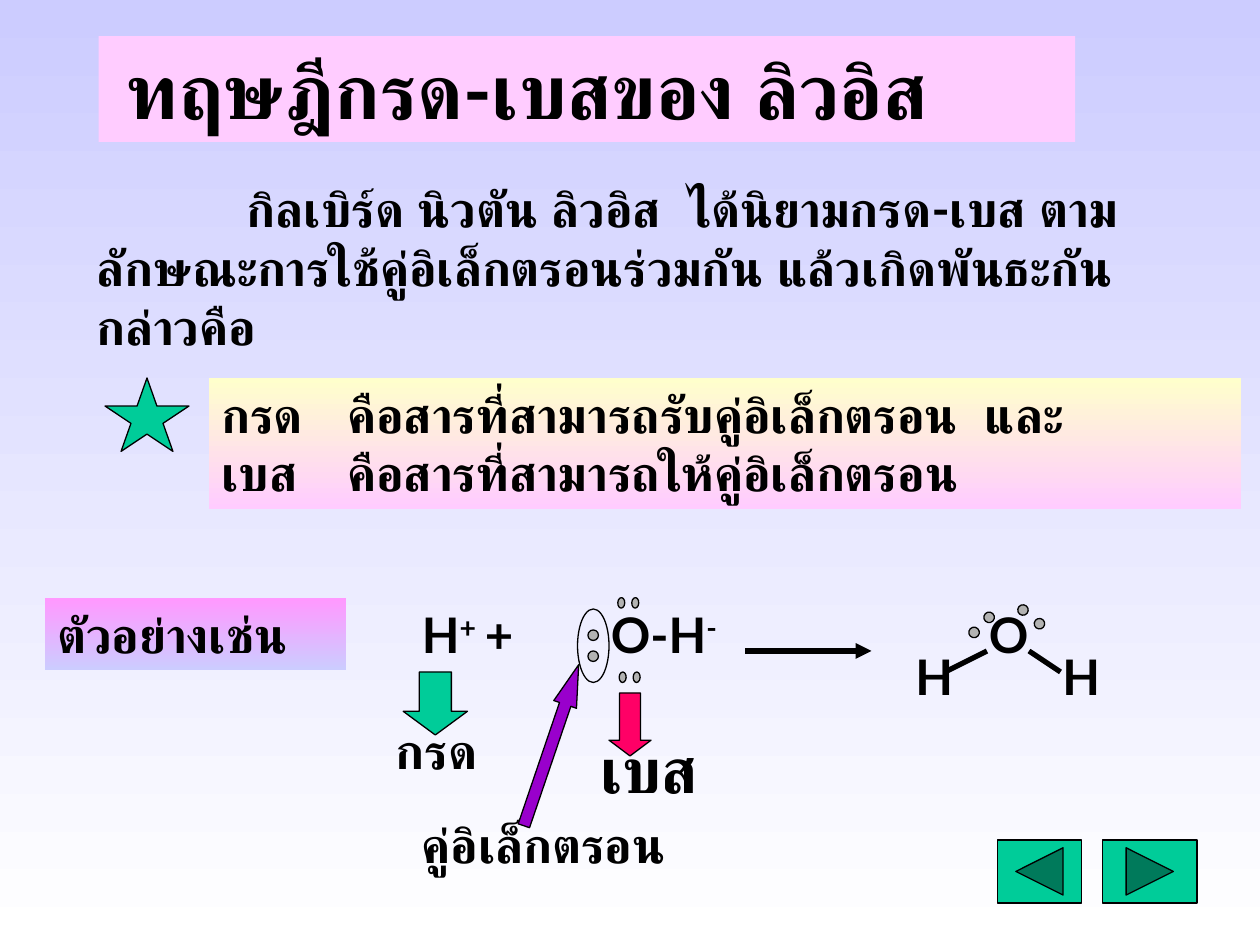
import pptx
import pptx.util
import pptx.dml.color
import pptx.enum.shapes
import pptx.enum.text
import pptx.oxml
import pptx.oxml.ns

Pt = pptx.util.Pt
SHAPE = pptx.enum.shapes.MSO_SHAPE

COLORS = {
    "ink": "000000", "lilac": "CCCCFF", "white": "FFFFFF", "pink": "FFCCFF",
    "cream": "FFFFCC", "magenta": "FF99FF", "green": "00CC99",
    "red": "FF0066", "purple": "9900CC", "dot": "B2B2B2",
}


def color(name):
    return pptx.dml.color.RGBColor.from_string(COLORS[name])


def paint(fill, names):
    """Fill with nothing, one colour, or a pair running from top to bottom."""
    if names is None:
        fill.background()
    elif isinstance(names, str):
        fill.solid()
        fill.fore_color.rgb = color(names)
    else:
        fill.gradient()
        fill.gradient_angle = 270
        for stop, name in zip(fill.gradient_stops, names):
            stop.color.rgb = color(name)


def add_shape(page, kind, place, fill=None, outlined=True, rotation=0, adjust=()):
    shape = page.shapes.add_shape(kind, *map(Pt, place))
    shape.shadow.inherit = False
    shape.rotation = rotation
    paint(shape.fill, fill)
    if outlined:
        shape.line.color.rgb = color("ink")
        shape.line.width = Pt(0.75)
    else:
        shape.line.fill.background()
    for index, value in enumerate(adjust):
        shape.adjustments[index] = value
    return shape


def write(box, *pieces, size=28, font="Lato", indent=0, tab=None):
    """Write spans into a box; a (text, True) piece is a superscript."""
    frame = box.text_frame
    for name, value in {
        "word_wrap": True,
        "auto_size": pptx.enum.text.MSO_AUTO_SIZE.SHAPE_TO_FIT_TEXT,
        "vertical_anchor": pptx.enum.text.MSO_ANCHOR.TOP,
    }.items():
        setattr(frame, name, value)
    para = frame.paragraphs[0]
    para.alignment = pptx.enum.text.PP_ALIGN.LEFT
    properties = para._p.get_or_add_pPr()
    properties.set("marL", "0")
    properties.set("indent", str(Pt(indent)))
    if tab:
        stops = pptx.oxml.parse_xml(
            f'<a:tabLst {pptx.oxml.ns.nsdecls("a")}>'
            f'<a:tab pos="{Pt(tab)}" algn="l"/></a:tabLst>')
        properties.append(stops)
    for number, (text, raised) in enumerate(pieces):
        for part_number, part in enumerate(text.split("\v")):
            if part_number:
                para.add_line_break()
            span = para.add_run()
            span.text = part
            for name, value in {"name": font, "size": Pt(size), "bold": True}.items():
                setattr(span.font, name, value)
            span.font.color.rgb = color("ink")
            if raised:
                span.font._element.set("baseline", "30000")


def add_label(page, place, *pieces, **style):
    write(page.shapes.add_textbox(*map(Pt, place)), *pieces, **style)


def add_panel(page, place, fill, text, **style):
    panel = add_shape(page, SHAPE.RECTANGLE, place, fill, outlined=False)
    write(panel, (text, False), **style)


def add_line(page, start, end, arrow=False):
    line = page.shapes.add_connector(
        pptx.enum.shapes.MSO_CONNECTOR.STRAIGHT, *map(Pt, start + end))
    line.line.color.rgb = color("ink")
    line.line.width = Pt(3)
    if arrow:
        line.line._get_or_add_ln().append(pptx.oxml.parse_xml(
            f'<a:tailEnd {pptx.oxml.ns.nsdecls("a")} type="triangle"/>'))
    line._element.spPr.append(pptx.oxml.parse_xml(
        f'<a:effectLst {pptx.oxml.ns.nsdecls("a")}/>'))


def add_electrons(page, centers, size=(6, 6), rotation=0):
    width, height = size
    for x, y in centers:
        place = (x - width / 2, y - height / 2, width, height)
        add_shape(page, SHAPE.OVAL, place, "dot", rotation=rotation)


def add_explanation(page):
    add_panel(page, (56.4, 20.6, 558, 60.5), "pink",
              "ทฤษฎีกรด-เบสของ ลิวอิส", size=44, indent=9)
    add_label(page, (48, 98.6, 624, 108.7),
              ("กิลเบิร์ด นิวตัน ลิวอิส  ได้นิยามกรด-เบส ตามลักษณะการใช้คู่อิเล็กตรอน"
               "ร่วมกัน แล้วเกิดพันธะกัน กล่าวคือ", False), indent=86)
    add_shape(page, SHAPE.STAR_5_POINT, (60, 216, 48, 42), "green")
    add_panel(page, (119.5, 216, 589.7, 74.9), ("cream", "pink"),
              "กรด\tคือสารที่สามารถรับคู่อิเล็กตรอน  และ\v"
              "เบส\tคือสารที่สามารถให้คู่อิเล็กตรอน", tab=73)
    add_panel(page, (25.5, 342, 172.5, 41), ("magenta", "lilac"), "ตัวอย่างเช่น")


def add_water(page):
    for text, x, y, width in (("H", 516, 366, 30), ("O", 558, 342, 36),
                              ("H", 600, 366, 30)):
        add_label(page, (x, y, width, 41), (text, False))
    add_line(page, (540, 384), (564, 372))
    add_line(page, (606, 384), (588, 372))
    add_electrons(page, [(565.2, 352.8), (556.6, 361.4)], rotation=43.9)
    add_electrons(page, [(584.6, 348.6), (594, 356.4)], rotation=309.8)


def add_reactants(page):
    add_line(page, (426, 372), (498, 372), arrow=True)
    add_label(page, (234, 342, 108.7, 41),
              ("H", False), ("+", True), ("\t+", False), tab=42.5)
    add_label(page, (342, 342, 78, 41), ("O-H", False), ("-", True))
    add_electrons(page, [(339, 363), (339, 375)])
    add_electrons(page, [(355, 344.5), (363, 344.5), (355.8, 387), (363.8, 387)],
                  size=(6, 4), rotation=92.6)


def add_callouts(page):
    block = (0.5, 0.375)
    add_shape(page, SHAPE.DOWN_ARROW, (230.4, 384, 36.7, 36), "green", adjust=block)
    add_label(page, (203, 408, 92, 41), ("กรด", False), indent=16)
    add_shape(page, SHAPE.DOWN_ARROW, (348, 396, 24, 36), "red", adjust=block)
    add_label(page, (336, 414, 92, 50.4), ("เบส", False), size=36, font="Arial")
    add_shape(page, SHAPE.LEFT_ARROW, (266.4, 419, 97.2, 13.7), "purple",
              rotation=108.8, adjust=(0.5, 1.75))
    add_label(page, (186, 462, 270.7, 41), ("คู่อิเล็กตรอน", False), indent=48)
    add_shape(page, SHAPE.OVAL, (330, 348, 18, 42))


def add_navigation(page):
    add_shape(page, SHAPE.ACTION_BUTTON_FORWARD_OR_NEXT, (630, 480, 54, 36), "green")
    add_shape(page, SHAPE.ACTION_BUTTON_BACK_OR_PREVIOUS, (570, 480, 48, 36), "green")


def main():
    deck = pptx.Presentation()
    deck.slide_width, deck.slide_height = Pt(720), Pt(540)
    page = deck.slides.add_slide(deck.slide_layouts[6])
    paint(page.background.fill, ("lilac", "white"))
    add_explanation(page)
    add_water(page)
    add_reactants(page)
    add_callouts(page)
    add_navigation(page)
    deck.save("out.pptx")


if __name__ == "__main__":
    main()
